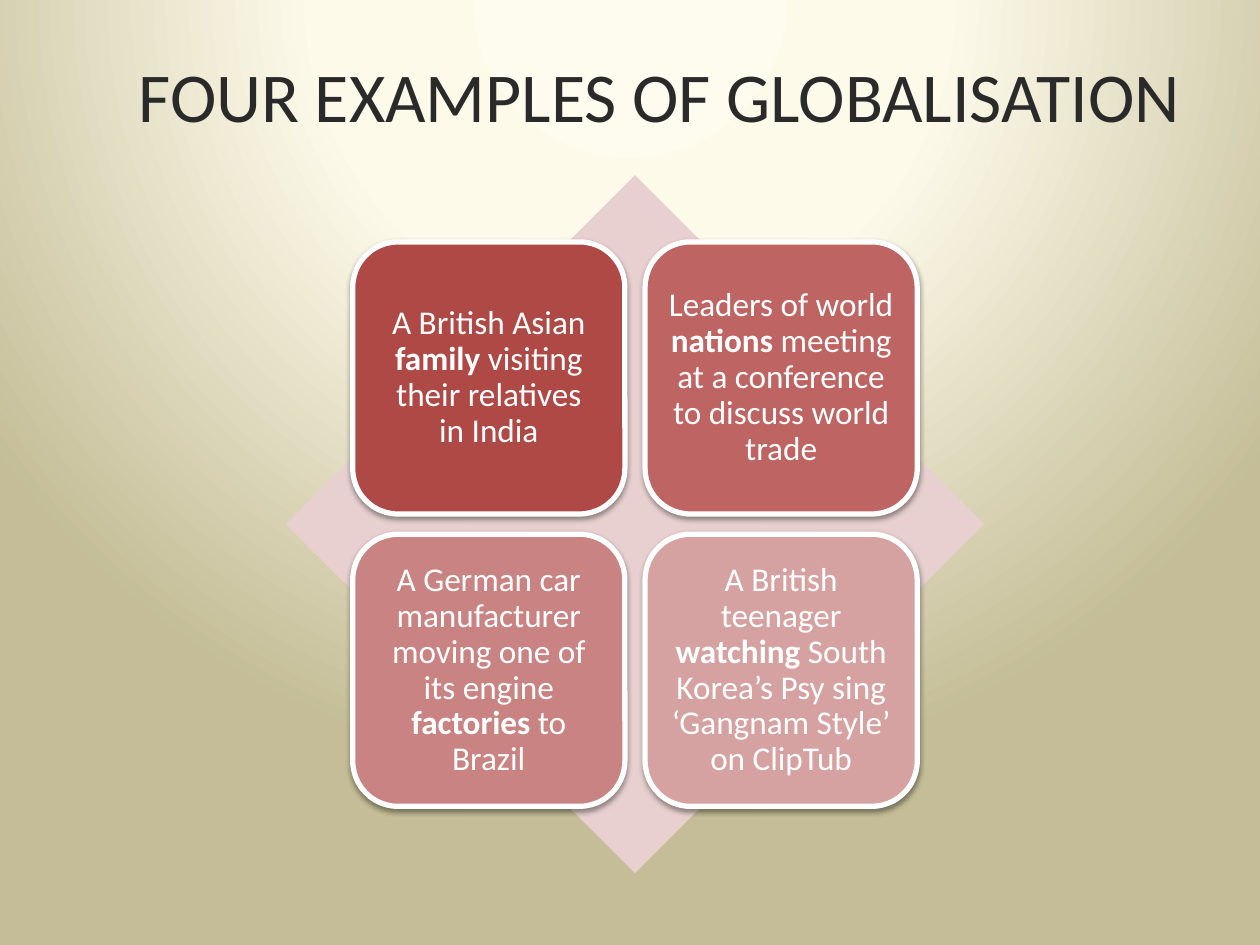
from dataclasses import dataclass

from pptx import Presentation
from pptx.dml.color import RGBColor
from pptx.enum.shapes import MSO_SHAPE
from pptx.enum.text import MSO_ANCHOR, MSO_AUTO_SIZE, PP_ALIGN
from pptx.oxml import parse_xml
from pptx.oxml.ns import nsdecls, qn
from pptx.shapes.group import GroupShape
from pptx.slide import Slide
from pptx.text.text import TextFrame
from pptx.util import Inches, Pt

COLOURS = {
    "glow": "FEFCEE",
    "cream": "FDFAEA",
    "khaki": "C4BD97",
    "ink": "2A2A2A",
    "white": "FFFFFF",
    "shadow": "000000",
    "diamond": "E8D0D0",
    "family": "AE4946",
    "nations": "BE6462",
    "factories": "C98382",
    "watching": "D6A2A1",
}
FONT = "Calibri"
CENTRE_X, CENTRE_Y = 5.04, 4.16
DIAMOND_SIZE = 5.54
CARD_SIZE, CARD_GAP = 2.16, 0.16


@dataclass
class Card:
    lead: str
    keyword: str
    ending: str


CARDS = [
    Card("A British Asian ", "family", " visiting their relatives\nin India"),
    Card("Leaders of world ", "nations",
         " meeting at a conference to discuss world trade"),
    Card("A German car manufacturer moving one of its engine ", "factories",
         " to Brazil"),
    Card("A British teenager ", "watching",
         " South Korea’s Psy sing ‘Gangnam Style’ on ClipTub"),
]


def colour(name: str) -> RGBColor:
    return RGBColor.from_string(COLOURS[name])


def paint_background(page: Slide) -> None:
    page.background.fill.solid()
    properties = page.element.find(".//" + qn("p:bgPr"))
    stops = "".join(
        f'<a:gs pos="{position * 1000}"><a:srgbClr val="{COLOURS[name]}"/></a:gs>'
        for position, name in [(0, "glow"), (40, "cream"), (100, "khaki")]
    )
    properties[0] = parse_xml(
        f'<a:gradFill {nsdecls("a")} rotWithShape="1"><a:gsLst>{stops}</a:gsLst>'
        '<a:path path="circle">'
        '<a:fillToRect l="50000" t="-80000" r="50000" b="180000"/>'
        '</a:path></a:gradFill>'
    )


def format_frame(frame: TextFrame, values: dict) -> None:
    for name, value in values.items():
        setattr(frame, name, value)


def add_span(paragraph, text: str, size: int, ink: str, bold: bool = False) -> None:
    span = paragraph.add_run()
    span.text = text
    for name, value in {"name": FONT, "size": Pt(size), "bold": bold}.items():
        setattr(span.font, name, value)
    span.font.color.rgb = colour(ink)


def write_title(page: Slide, text: str) -> None:
    title = page.shapes.title
    place = {"left": 1, "top": 0.3, "width": 8.49, "height": 1.45}
    for name, value in place.items():
        setattr(title, name, Inches(value))
    format_frame(title.text_frame, {
        "vertical_anchor": MSO_ANCHOR.BOTTOM,
        "margin_bottom": Inches(0.66),
        "auto_size": MSO_AUTO_SIZE.NONE,
        "word_wrap": True,
    })
    paragraph = title.text_frame.paragraphs[0]
    paragraph.alignment = PP_ALIGN.LEFT
    paragraph.line_spacing = 0.9
    add_span(paragraph, text, 40, "ink")


def add_diamond(group: GroupShape) -> None:
    diamond = group.shapes.add_shape(
        MSO_SHAPE.DIAMOND,
        Inches(CENTRE_X - DIAMOND_SIZE / 2), Inches(CENTRE_Y - DIAMOND_SIZE / 2),
        Inches(DIAMOND_SIZE), Inches(DIAMOND_SIZE),
    )
    diamond.shadow.inherit = False
    diamond.fill.solid()
    diamond.fill.fore_color.rgb = colour("diamond")
    diamond.line.fill.background()


def add_card(group: GroupShape, card: Card, row: int, column: int) -> None:
    pitch = CARD_SIZE + CARD_GAP
    start = CARD_SIZE + CARD_GAP / 2
    box = group.shapes.add_shape(
        MSO_SHAPE.ROUNDED_RECTANGLE,
        Inches(CENTRE_X - start + column * pitch),
        Inches(CENTRE_Y - start + row * pitch),
        Inches(CARD_SIZE), Inches(CARD_SIZE),
    )
    box.fill.solid()
    box.fill.fore_color.rgb = colour(card.keyword)
    box.line.color.rgb = colour("white")
    box.line.width = Pt(3)
    box.shadow.inherit = False
    effects = box.element.spPr.find(qn("a:effectLst"))
    effects.append(parse_xml(
        f'<a:outerShdw {nsdecls("a")} blurRad="{Pt(3.1)}" dist="{Pt(1.6)}"'
        f' dir="5400000" rotWithShape="0"><a:srgbClr val="{COLOURS["shadow"]}">'
        '<a:alpha val="38000"/></a:srgbClr></a:outerShdw>'
    ))

    margins = {f"margin_{side}": Inches(0.08)
               for side in ("left", "top", "right", "bottom")}
    format_frame(box.text_frame, {
        **margins, "vertical_anchor": MSO_ANCHOR.MIDDLE, "word_wrap": True,
    })
    paragraph = box.text_frame.paragraphs[0]
    paragraph.alignment = PP_ALIGN.CENTER
    paragraph.line_spacing = 0.9
    add_span(paragraph, card.lead, 19, "white")
    add_span(paragraph, card.keyword, 19, "white", bold=True)
    for index, line in enumerate(card.ending.split("\n")):
        if index:
            paragraph.add_line_break()
        add_span(paragraph, line, 19, "white")


def main() -> None:
    deck = Presentation()
    deck.slide_width, deck.slide_height = Inches(10), Inches(7.5)
    page = deck.slides.add_slide(deck.slide_layouts[5])
    paint_background(page)
    write_title(page, "FOUR EXAMPLES OF GLOBALISATION")
    matrix = page.shapes.add_group_shape()
    add_diamond(matrix)
    for index, card in enumerate(CARDS):
        add_card(matrix, card, *divmod(index, 2))
    deck.save("out.pptx")


if __name__ == "__main__":
    main()
